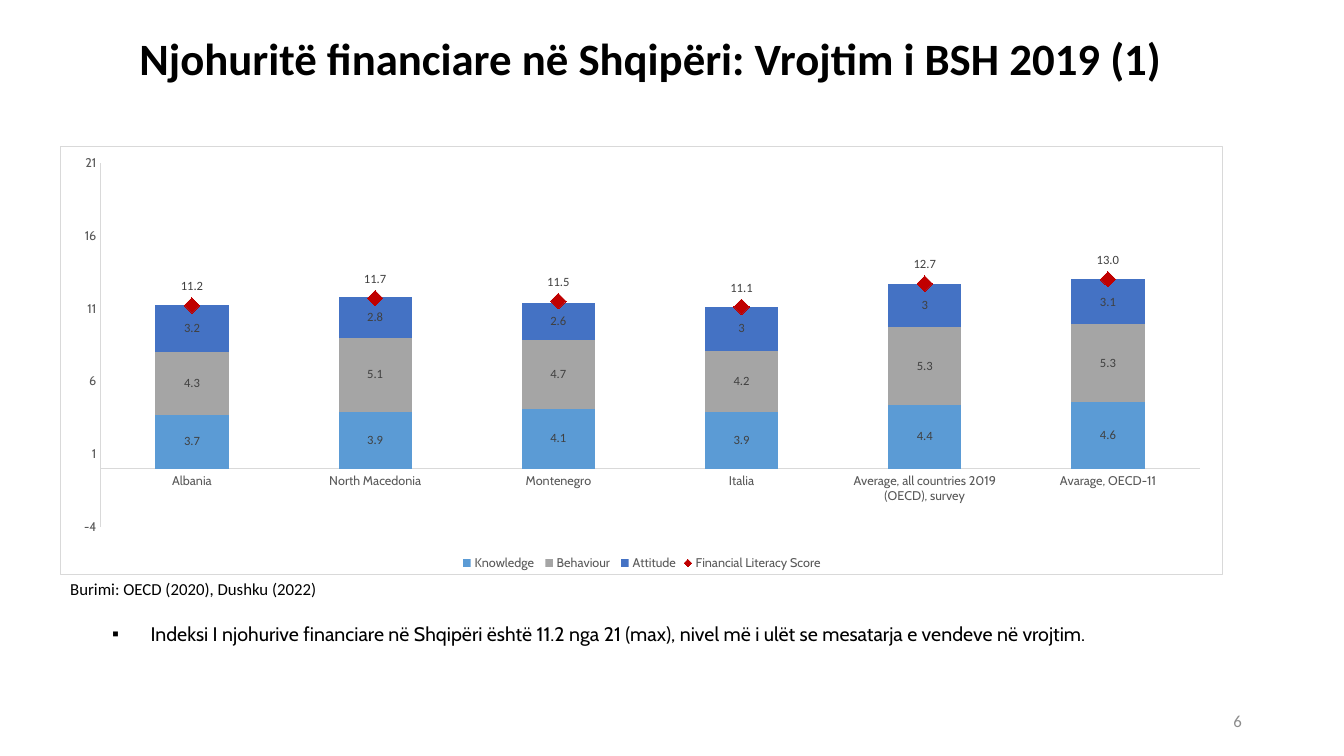
"""Build the slide on financial literacy in Albania."""
from dataclasses import dataclass

from pptx import Presentation
from pptx.chart.chart import Chart
from pptx.chart.data import CategoryChartData
from pptx.dml.color import RGBColor
from pptx.enum.chart import (XL_CHART_TYPE, XL_LABEL_POSITION, XL_LEGEND_POSITION,
                             XL_MARKER_STYLE, XL_TICK_MARK)
from pptx.enum.text import MSO_ANCHOR, MSO_AUTO_SIZE, PP_ALIGN
from pptx.oxml import parse_xml
from pptx.oxml.ns import nsdecls, qn
from pptx.util import Cm, Pt


@dataclass(frozen=True)
class Theme:
    heading: str = "Calibri"
    body: str = "Cabin"
    ink: str = "000000"
    axis: str = "595959"
    label: str = "404040"
    rule: str = "D9D9D9"
    page: str = "8C8C8C"
    marker: str = "C00000"
    title_size: int = 32
    body_size: int = 14
    note_size: int = 12
    chart_size: int = 9


@dataclass(frozen=True)
class Text:
    text: str
    box: tuple[float, float, float, float]
    size: int
    font: str
    color: str
    bold: bool = False
    align: PP_ALIGN = PP_ALIGN.LEFT
    anchor: MSO_ANCHOR = MSO_ANCHOR.TOP
    spacing: float = 1.0


@dataclass(frozen=True)
class Component:
    name: str
    values: tuple[float, ...]
    color: str


THEME = Theme()
TITLE = Text("Njohuritë financiare në Shqipëri: Vrojtim i BSH 2019 (1)",
             (1.8, 0.61, 29.21, 1.83), THEME.title_size, THEME.heading, THEME.ink,
             True, PP_ALIGN.CENTER, MSO_ANCHOR.MIDDLE, 0.9)
FINDING = Text("Indeksi I njohurive financiare në Shqipëri është 11.2 nga 21 (max), "
               "nivel më i ulët se mesatarja e vendeve në vrojtim.",
               (2.57, 15.54, 28.27, 1.63), THEME.body_size, THEME.body, THEME.ink)
NOTES = (
    Text("Burimi: OECD (2020), Dushku (2022)", (1.52, 14.45, 7.77, 0.76),
         THEME.note_size, THEME.heading, THEME.ink),
    Text("6", (23.93, 17.65, 7.62, 1.02), THEME.note_size, THEME.heading, THEME.page,
         align=PP_ALIGN.RIGHT, anchor=MSO_ANCHOR.MIDDLE),
)
CHART_BOX = (1.52, 3.68, 29.31, 10.82)
COUNTRIES = ("Albania", "North Macedonia", "Montenegro", "Italia",
             "Average, all countries 2019 (OECD), survey", "Avarage, OECD-11")
COMPONENTS = (
    Component("Knowledge ", (3.7, 3.9, 4.1, 3.9, 4.4, 4.6), "5B9BD5"),
    Component("Behaviour ", (4.3, 5.1, 4.7, 4.2, 5.3, 5.3), "A5A5A5"),
    Component("Attitude", (3.2, 2.8, 2.6, 3, 3, 3.1), "4472C4"),
)
SCORE = Component("Financial Literacy Score", (11.2, 11.7, 11.5, 11.1, 12.7, 13), THEME.marker)


def rgb(color: str) -> RGBColor:
    return RGBColor.from_string(color)


def set_font(font, size: int, name: str, color: str, bold: bool = False) -> None:
    font.size, font.name, font.bold = Pt(size), name, bold
    font.color.rgb = rgb(color)


def place(sp, item: Text) -> None:
    sp.left, sp.top, sp.width, sp.height = map(Cm, item.box)
    tf = sp.text_frame
    tf.text = item.text
    tf.word_wrap, tf.auto_size = True, MSO_AUTO_SIZE.NONE
    tf.vertical_anchor = item.anchor
    p = tf.paragraphs[0]
    p.alignment, p.line_spacing, p.space_before = item.align, item.spacing, Pt(0)
    set_font(p.font, item.size, item.font, item.color, item.bold)


def add_bullet(p, char: str, indent: float) -> None:
    pPr = p._p.get_or_add_pPr()
    pPr.set("marL", str(Cm(indent)))
    pPr.set("indent", str(-Cm(indent)))
    bullet = parse_xml(f'<a:buChar {nsdecls("a")} char="{char}"/>')
    pPr.insert_element_before(bullet, "a:tabLst", "a:defRPr", "a:extLst")


def move_score_to_line(chart: Chart) -> None:
    bars = chart.element.find(".//" + qn("c:barChart"))
    ser = bars.findall(qn("c:ser"))[-1]
    for flag in ser.findall(qn("c:invertIfNegative")):
        ser.remove(flag)
    line = parse_xml(f'<c:lineChart {nsdecls("c")}><c:grouping val="standard"/>'
                     '<c:varyColors val="0"/><c:marker val="1"/></c:lineChart>')
    line.insert(2, ser)
    for axis in bars.findall(qn("c:axId")):
        line.append(parse_xml(f'<c:axId {nsdecls("c")} val="{axis.get("val")}"/>'))
    bars.addnext(line)


def frame_chart(chart: Chart) -> None:
    chart.element.find(qn("c:chart")).addnext(parse_xml(
        f'<c:spPr {nsdecls("c", "a")}><a:solidFill><a:srgbClr val="FFFFFF"/></a:solidFill>'
        f'<a:ln w="{Pt(0.75)}"><a:solidFill><a:srgbClr val="{THEME.rule}"/></a:solidFill>'
        '</a:ln></c:spPr>'))
    area = chart.element.find(".//" + qn("c:plotArea"))
    for old in area.findall(qn("c:layout")):
        area.remove(old)
    sides = "".join(f'<c:{k} val="{v}"/>' for k, v in
                    (("x", 0.034), ("y", 0.038), ("w", 0.946), ("h", 0.85)))
    area.insert(0, parse_xml(
        f'<c:layout {nsdecls("c")}><c:manualLayout><c:layoutTarget val="inner"/>'
        f'<c:xMode val="edge"/><c:yMode val="edge"/>{sides}</c:manualLayout></c:layout>'))


def style_labels(series, number_format: str) -> None:
    labels = series.data_labels
    labels.show_value = True
    labels.number_format, labels.number_format_is_linked = number_format, False
    set_font(labels.font, THEME.chart_size, THEME.heading, THEME.label)


def style_axis(axis) -> None:
    axis.has_major_gridlines = False
    axis.major_tick_mark = axis.minor_tick_mark = XL_TICK_MARK.NONE
    axis.format.line.color.rgb = rgb(THEME.rule)
    axis.format.line.width = Pt(0.75)
    set_font(axis.tick_labels.font, THEME.chart_size, THEME.body, THEME.axis)


def add_score_chart(slide) -> None:
    data = CategoryChartData()
    data.categories = COUNTRIES
    for item in (*COMPONENTS, SCORE):
        data.add_series(item.name, item.values)
    chart = slide.shapes.add_chart(XL_CHART_TYPE.COLUMN_STACKED, *map(Cm, CHART_BOX), data).chart
    chart.has_title = False
    set_font(chart.font, 10, THEME.heading, THEME.ink)
    move_score_to_line(chart)
    frame_chart(chart)

    bars, line = chart.plots
    bars.gap_width, bars.overlap, bars.vary_by_categories = 150, 100, False
    for series, item in zip(bars.series, COMPONENTS):
        series.format.fill.solid()
        series.format.fill.fore_color.rgb = rgb(item.color)
        style_labels(series, "General")
    score = line.series[0]
    score.smooth = False
    score.format.line.fill.background()
    score.marker.style, score.marker.size = XL_MARKER_STYLE.DIAMOND, 11
    score.marker.format.fill.solid()
    score.marker.format.fill.fore_color.rgb = rgb(SCORE.color)
    score.marker.format.line.fill.background()
    style_labels(score, "0.0")
    score.data_labels.position = XL_LABEL_POSITION.ABOVE

    for axis in (chart.category_axis, chart.value_axis):
        style_axis(axis)
    scale = chart.value_axis
    scale.minimum_scale, scale.maximum_scale, scale.major_unit = -4, 21, 5
    chart.has_legend = True
    chart.legend.position = XL_LEGEND_POSITION.BOTTOM
    chart.legend.include_in_layout = False
    set_font(chart.legend.font, THEME.chart_size, THEME.body, THEME.axis)


def main() -> None:
    prs = Presentation()
    prs.slide_width, prs.slide_height = Cm(33.87), Cm(19.05)
    s = prs.slides.add_slide(prs.slide_layouts[1])
    place(s.shapes.title, TITLE)
    body = s.placeholders[1]
    place(body, FINDING)
    add_bullet(body.text_frame.paragraphs[0], "▪", 0.97)
    add_score_chart(s)
    for note in NOTES:
        place(s.shapes.add_textbox(*map(Cm, note.box)), note)
    prs.save("out.pptx")


if __name__ == "__main__":
    main()
